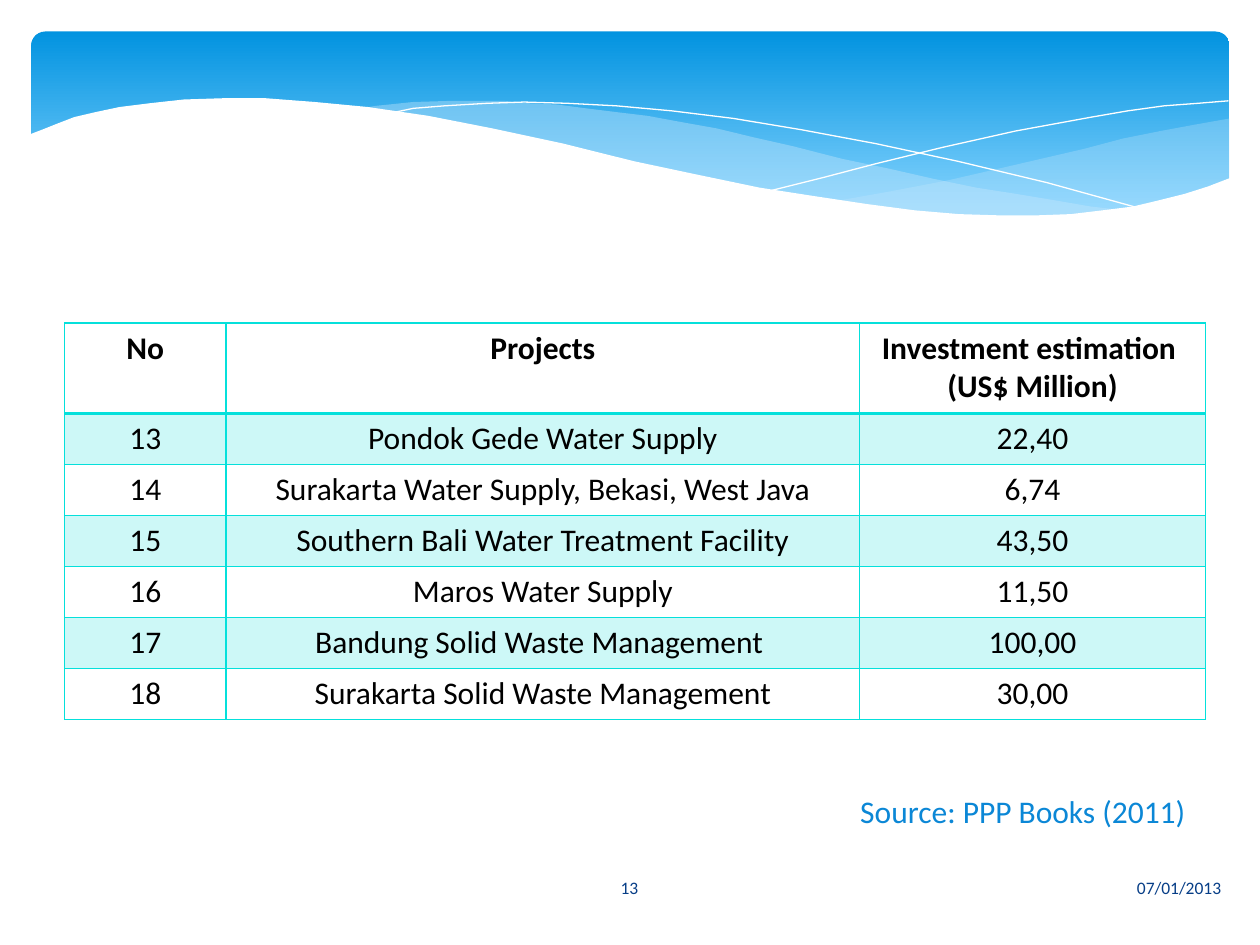
from lxml import etree
from pptx import Presentation
from pptx.dml.color import RGBColor
from pptx.enum.shapes import MSO_SHAPE
from pptx.enum.text import MSO_ANCHOR, PP_ALIGN
from pptx.oxml.ns import qn
from pptx.util import Pt

ROUNDED = MSO_SHAPE.ROUNDED_RECTANGLE
LEFT, CENTER, RIGHT = PP_ALIGN.LEFT, PP_ALIGN.CENTER, PP_ALIGN.RIGHT
TOP, MIDDLE = MSO_ANCHOR.TOP, MSO_ANCHOR.MIDDLE
TURQUOISE = "05E0DB"
PALE_BLUE = "C6E7FC"
WHITE = "FFFFFF"
NAVY = "073E87"
HUNDREDTH_INCH = Pt(0.72)


def paint(fill, *colors, opacity=100):
    if len(colors) == 2:
        fill.gradient()
        fill.gradient_angle = 270
        for stop, color, position in zip(fill.gradient_stops, colors, (0, 0.9)):
            stop.color.rgb = RGBColor.from_string(color)
            stop.position = position
        return
    fill.solid()
    fill.fore_color.rgb = RGBColor.from_string(colors[0])
    if opacity < 100:
        color_element = fill._xPr.find(".//" + qn("a:srgbClr"))
        etree.SubElement(color_element, qn("a:alpha"), val=str(opacity * 1000))


def write(frame, text, size=18, color="000000", bold=False, align=CENTER, anchor=TOP):
    frame.word_wrap = True
    frame.vertical_anchor = anchor
    for index, line in enumerate(text.split("\n")):
        paragraph = frame.add_paragraph() if index else frame.paragraphs[0]
        paragraph.alignment = align
        run = paragraph.add_run()
        run.text = line
        run.font.name = "Calibri"
        run.font.size = Pt(size)
        run.font.bold = bold
        paint(run.font.fill, color)


presentation = Presentation()
presentation.slide_width = Pt(720)
presentation.slide_height = Pt(540)
slide = presentation.slides.add_slide(presentation.slide_layouts[6])
shapes = slide.shapes

banner = shapes.add_shape(ROUNDED, Pt(18), Pt(18), Pt(684.5), Pt(112.5))
banner.adjustments[0] = 0.07
banner.shadow.inherit = False
banner.line.fill.background()
paint(banner.fill, "0293E0", "83D3FE")

right_wave = [
    (976, 94), (948, 99), (921, 104), (891, 110), (861, 118), (805, 131), (753, 143),
    (706, 152), (661, 160), (691, 164), (719, 167), (745, 169), (769, 171), (792, 172),
    (824, 172), (854, 170), (881, 167), (905, 163), (928, 158), (949, 152), (963, 147),
    (976, 141),
]
middle_wave = [
    (893, 167), (866, 164), (837, 159), (807, 154), (775, 149), (741, 142), (706, 134),
    (668, 126), (629, 116), (598, 109), (569, 102), (541, 97), (514, 92), (489, 89),
    (465, 86), (442, 83), (420, 82), (399, 80), (361, 80), (328, 81), (299, 84),
    (286, 86), (323, 90), (362, 97), (404, 106), (449, 116), (491, 126), (530, 135),
    (566, 143), (601, 150), (634, 156), (665, 161), (695, 165), (722, 168), (748, 170),
    (773, 172), (807, 173), (838, 172), (867, 170),
]
falling_line = [
    (309, 90), (328, 86), (353, 84), (387, 82), (416, 81), (450, 82), (489, 84),
    (533, 88), (582, 94), (636, 103), (695, 114), (760, 128), (831, 145), (907, 166),
]
rising_line = [
    (613, 151), (653, 141), (695, 130), (748, 117), (806, 104), (866, 93), (895, 88),
    (924, 84), (951, 82), (975, 80),
]
white_wave = [
    (977, 141), (959, 148), (940, 154), (920, 159), (899, 164), (875, 167), (850, 170),
    (823, 171), (793, 171), (761, 170), (726, 167), (688, 162), (648, 156), (603, 149),
    (555, 139), (503, 128), (447, 114), (391, 102), (340, 92), (292, 85), (250, 81),
    (211, 78), (177, 78), (146, 79), (119, 82), (95, 85), (76, 89), (59, 93),
    (46, 98), (36, 102), (23, 107), (23, 224), (977, 224),
]
waves = [
    (right_wave, PALE_BLUE, 29),
    (middle_wave, PALE_BLUE, 40),
    (falling_line, None, 100),
    (rising_line, None, 100),
    (white_wave, WHITE, 100),
]
for points, color, opacity in waves:
    builder = shapes.build_freeform(*points[0], scale=HUNDREDTH_INCH)
    builder.add_line_segments(points[1:], close=color is not None)
    wave = builder.convert_to_shape()
    wave.shadow.inherit = False
    if color:
        paint(wave.fill, color, opacity=opacity)
        wave.line.fill.background()
    else:
        wave.fill.background()
        paint(wave.line.fill, WHITE)
        wave.line.width = Pt(0)

projects = [
    ("No", "Projects", "Investment estimation \n(US$ Million)"),
    ("13", "Pondok Gede Water Supply", "22,40"),
    ("14", "Surakarta Water Supply, Bekasi, West Java", "6,74"),
    ("15", "Southern Bali Water Treatment Facility", "43,50"),
    ("16", "Maros Water Supply", "11,50"),
    ("17", "Bandung Solid Waste Management ", "100,00"),
    ("18", "Surakarta Solid Waste Management", "30,00"),
]
table = shapes.add_table(len(projects), 3, Pt(36.9), Pt(184.7), Pt(652), Pt(226.6)).table
table.first_row = False
table.horz_banding = False
for column, width in zip(table.columns, (92.3, 362, 197.7)):
    column.width = Pt(width)
for row_index, values in enumerate(projects):
    is_header = row_index == 0
    table.rows[row_index].height = Pt(51.4 if is_header else 29.2)
    for column_index, value in enumerate(values):
        cell = table.cell(row_index, column_index)
        write(cell.text_frame, value, bold=is_header)
        if row_index % 2:
            paint(cell.fill, TURQUOISE, opacity=20)
        else:
            cell.fill.background()
        properties = cell._tc.get_or_add_tcPr()
        for position, side in enumerate(("lnL", "lnR", "lnT", "lnB")):
            is_header_rule = (row_index, side) in ((0, "lnB"), (1, "lnT"))
            width = Pt(2 if is_header_rule else 1)
            border = etree.Element(qn("a:" + side), w=str(width))
            border_fill = etree.SubElement(border, qn("a:solidFill"))
            etree.SubElement(border_fill, qn("a:srgbClr"), val=TURQUOISE)
            properties.insert(position, border)

captions = [
    ("Source: PPP Books (2011)", (484.5, 449.3, 205.5, 29), 18, "0B87D6", LEFT, TOP),
    ("07/01/2013", (406.8, 492.5, 298, 28.8), 10, NAVY, RIGHT, MIDDLE),
    ("13", (314, 492.5, 91.4, 28.8), 10, NAVY, CENTER, MIDDLE),
]
for text, bounds, size, color, align, anchor in captions:
    text_box = shapes.add_textbox(*map(Pt, bounds))
    write(text_box.text_frame, text, size=size, color=color, align=align, anchor=anchor)

presentation.save("out.pptx")
